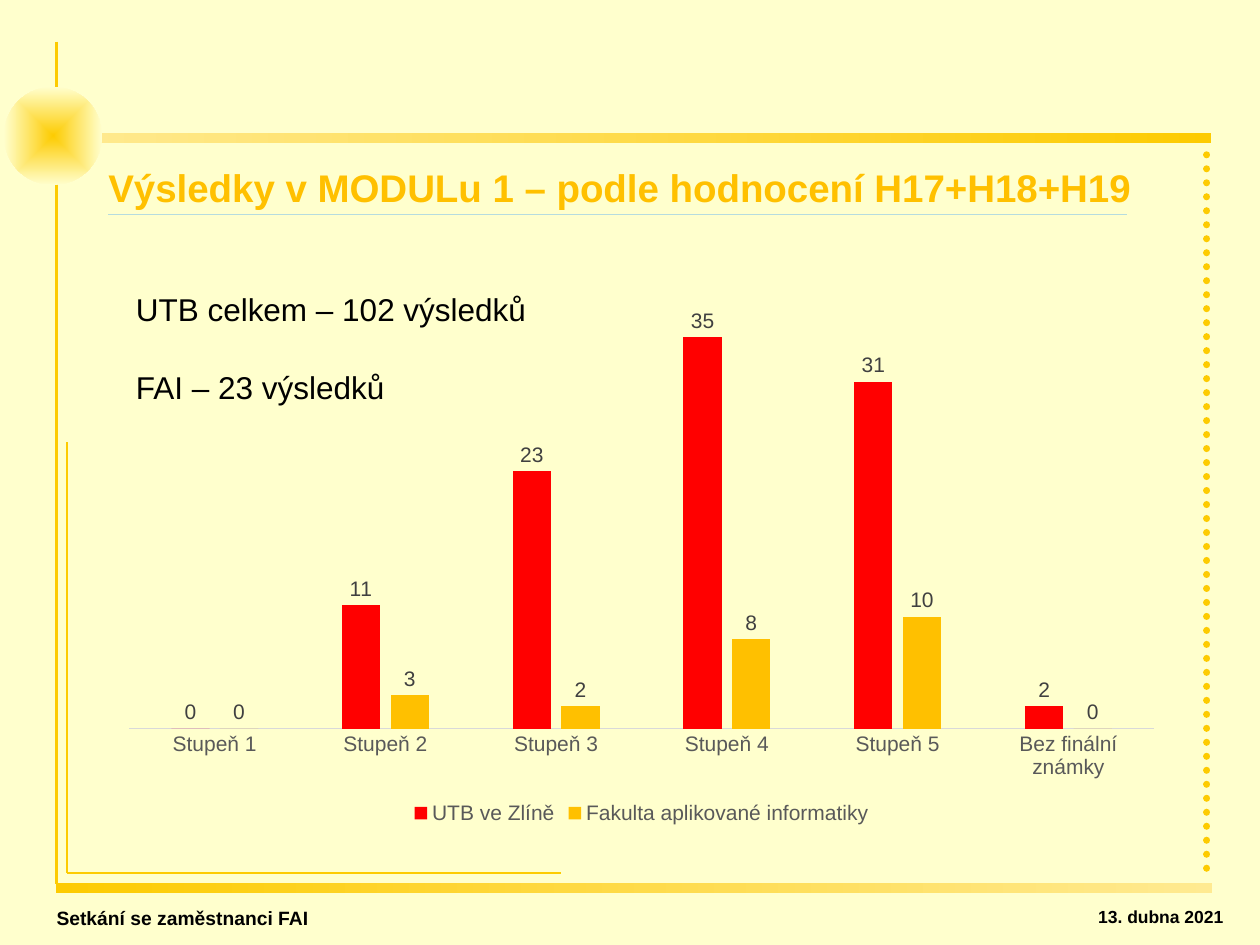
"""Build the slide with the MODUL 1 results chart."""
from lxml.etree import SubElement
from pptx import Presentation
from pptx.chart.data import CategoryChartData
from pptx.dml.color import RGBColor
from pptx.enum.chart import XL_CHART_TYPE, XL_LABEL_POSITION, XL_LEGEND_POSITION, XL_TICK_MARK
from pptx.enum.dml import MSO_LINE
from pptx.enum.shapes import MSO_CONNECTOR, MSO_SHAPE
from pptx.enum.text import MSO_ANCHOR, MSO_AUTO_SIZE, PP_ALIGN
from pptx.oxml import parse_xml
from pptx.oxml.ns import nsdecls, qn
from pptx.util import Cm, Pt


def paint(color, code):
    color.rgb = RGBColor.from_string(code)


def style(font, size, code, bold=False):
    font.name, font.size, font.bold = "Arial", Pt(size), bold
    paint(font.color, code)


GOLD, PALE, CREAM = "FDCB01", "FFEA91", "FFFFCD"
deck = Presentation()
deck.slide_width, deck.slide_height = Cm(25.4), Cm(19.05)
slide = deck.slides.add_slide(deck.slide_layouts[5])
shapes = slide.shapes
slide.background.fill.solid()
paint(slide.background.fill.fore_color, CREAM)

lines = [
    (1.14, 0.84, 1.14, 17.83, GOLD, 1.5),
    (24.33, 3.12, 24.33, 17.63, GOLD, 4),
    (1.35, 8.92, 1.35, 17.6, GOLD, 0.75),
    (1.35, 17.6, 11.3, 17.6, GOLD, 1),
    (2.18, 4.32, 22.71, 4.32, "B6DCDF", 0.75),
]
for *ends, code, width in lines:
    rule = shapes.add_connector(MSO_CONNECTOR.STRAIGHT, *map(Cm, ends))
    paint(rule.line.color, code)
    rule.line.width = Pt(width)
    if width == 4:
        rule.line.dash_style = MSO_LINE.ROUND_DOT
        rule.line._get_or_add_ln().set("cap", "rnd")
    SubElement(rule._element.spPr, qn("a:effectLst"))

frame = [
    (MSO_SHAPE.RECTANGLE, 1.12, 17.81, 23.32, 0.2, GOLD, PALE),
    (MSO_SHAPE.RECTANGLE, 1.22, 2.69, 23.19, 0.2, PALE, GOLD),
    (MSO_SHAPE.FLOWCHART_SUMMING_JUNCTION, 0.08, 1.75, 1.98, 1.98, GOLD, CREAM),
]
for kind, *place, start, end in frame:
    part = shapes.add_shape(kind, *map(Cm, place))
    part.shadow.inherit = False
    part.line.fill.background()
    part.fill.gradient()
    part.fill.gradient_angle = 0
    for stop, code in zip(part.fill.gradient_stops, (start, end)):
        paint(stop.color, code)
    if kind != MSO_SHAPE.RECTANGLE:
        lin = part._element.spPr.find(".//" + qn("a:lin"))
        lin.getparent().replace(lin, parse_xml(
            f'<a:path {nsdecls("a")} path="shape">'
            '<a:fillToRect l="50000" t="50000" r="50000" b="50000"/></a:path>'))

title = shapes.title
title.left, title.top, title.width, title.height = map(Cm, (1.93, 2.92, 21.79, 2.59))
title.text_frame.vertical_anchor = MSO_ANCHOR.TOP
title.text_frame.margin_top = Cm(0.38)
para = title.text_frame.paragraphs[0]
para.alignment = PP_ALIGN.LEFT
run = para.add_run()
run.text = "Výsledky v MODULu 1 – podle hodnocení H17+H18+H19"
style(run.font, 22, "FFC000", True)

data = CategoryChartData()
data.categories = [f"Stupeň {n}" for n in range(1, 6)] + ["Bez finální známky"]
data.add_series("UTB ve Zlíně", (0, 11, 23, 35, 31, 2))
data.add_series("Fakulta aplikované informatiky", (0, 3, 2, 8, 10, 0))
chart = shapes.add_chart(XL_CHART_TYPE.COLUMN_CLUSTERED, Cm(2.18), Cm(5.44),
                         Cm(21.51), Cm(11.28), data).chart
style(chart.font, 10, "000000")
chart.has_title = False
chart.has_legend = True
chart.legend.position = XL_LEGEND_POSITION.BOTTOM
chart.legend.include_in_layout = False
style(chart.legend.font, 12, "595959")

base = chart.category_axis
base.major_tick_mark = XL_TICK_MARK.NONE
style(base.tick_labels.font, 12, "595959")
paint(base.format.line.color, "D9D9D9")
base.format.line.width = Pt(0.75)
scale = chart.value_axis
scale.visible = scale.has_major_gridlines = False
scale.minimum_scale, scale.maximum_scale = 0, 40

plot = chart.plots[0]
plot.gap_width, plot.overlap, plot.vary_by_categories = 219, -27, False
for series, code, form in zip(plot.series, ("FF0000", "FFC000"), ("General", "#,##0")):
    series.format.fill.solid()
    paint(series.format.fill.fore_color, code)
    labels = series.data_labels
    labels.show_value = True
    labels.position = XL_LABEL_POSITION.OUTSIDE_END
    labels.number_format, labels.number_format_is_linked = form, False
    style(labels.font, 12, "404040")

area = chart._chartSpace.chart.plotArea
for old in area.findall(qn("c:layout")):
    area.remove(old)
area.insert(0, parse_xml(
    f'<c:layout {nsdecls("c")}><c:manualLayout><c:layoutTarget val="inner"/>'
    '<c:xMode val="edge"/><c:yMode val="edge"/><c:x val="0.02"/><c:y val="0.02"/>'
    '<c:w val="0.96"/><c:h val="0.8"/></c:manualLayout></c:layout>'))

texts = [
    (0.89, 18.14, 11.4, 0.61, 11, True, ["Setkání se zaměstnanci FAI"]),
    (21.89, 18.14, 3.2, 0.61, 10, True, ["13. dubna 2021"]),
    (2.49, 5.72, 8.41, 2.57, 18, False, ["UTB celkem – 102 výsledků", "FAI – 23 výsledků"]),
]
for *place, size, bold, rows in texts:
    box = shapes.add_textbox(*map(Cm, place)).text_frame
    box.word_wrap = True
    if len(rows) > 1:
        box.auto_size = MSO_AUTO_SIZE.SHAPE_TO_FIT_TEXT
    for i, row in enumerate(rows):
        para = box.add_paragraph() if i else box.paragraphs[0]
        if i:
            para.space_before = Pt(23)
        run = para.add_run()
        run.text = row
        style(run.font, size, "000000", bold)

deck.save("out.pptx")
